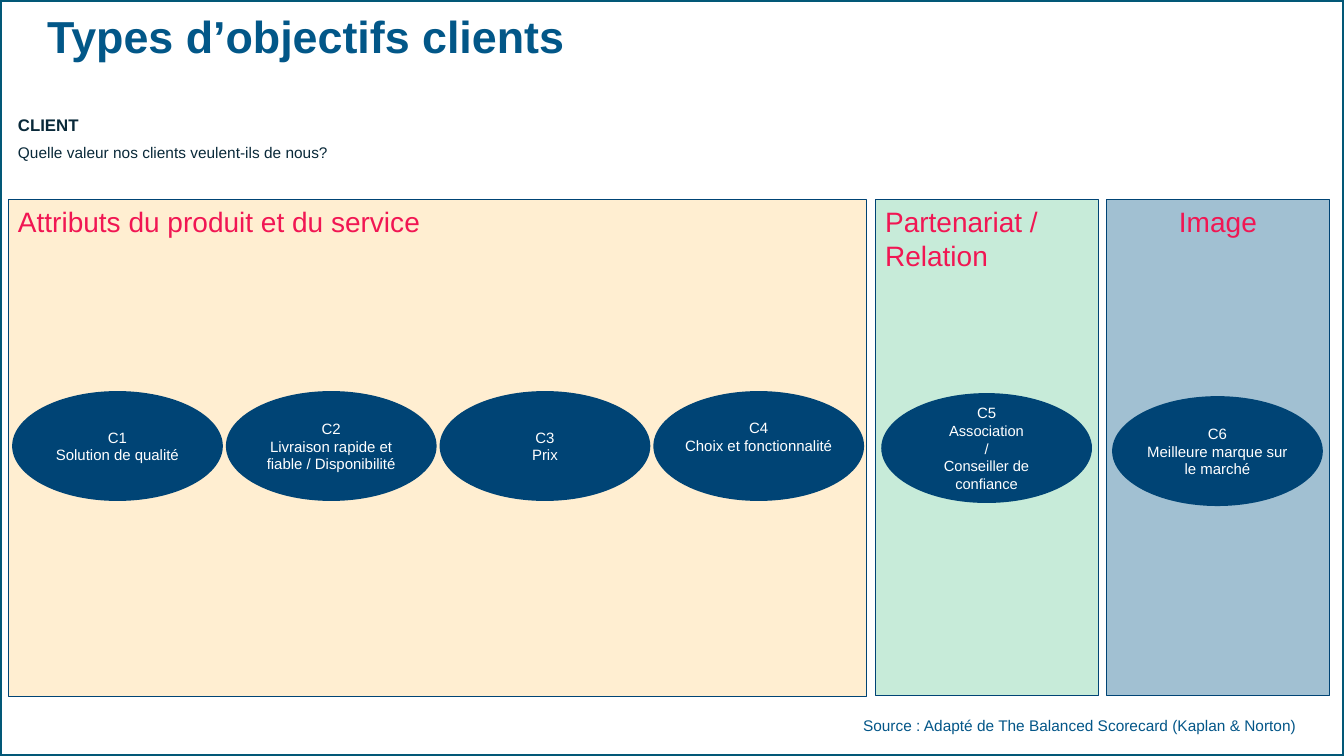
"""Build the slide on types of customer objectives."""
from dataclasses import dataclass

from lxml import etree
from pptx import Presentation, util as u
from pptx.dml.color import RGBColor
from pptx.enum import shapes, text
from pptx.oxml import ns

COLORS = {
    "frame": "025877", "title": "025788", "navy": "004475", "heading": "F11653",
    "peach": "FFAA1B", "mint": "C7EBD9", "blue": "005687", "white": "FFFFFF",
    "ink": "092939", "source": "035688",
}
LEFT, CENTER = text.PP_ALIGN.LEFT, text.PP_ALIGN.CENTER
MIDDLE, TOP = text.MSO_ANCHOR.MIDDLE, text.MSO_ANCHOR.TOP
PANEL_TOP = 1.98
OVAL_WIDTH, OVAL_HEIGHT = 2.09, 1.09


@dataclass
class Panel:
    heading: str
    left: float
    width: float
    height: float
    color: str
    opacity: int = 100
    align: text.PP_ALIGN = LEFT


@dataclass
class Objective:
    lines: list[str]
    left: float
    top: float = 3.88
    bottom_inset: float = 0.05
    detail_size: float = 10.7


PANELS = [
    Panel("Partenariat / Relation", 8.68, 2.22, 4.92, "mint"),
    Panel("Attributs du produit et du service", 0.08, 8.51, 4.93, "peach", 20),
    Panel("Image", 10.97, 2.22, 4.92, "blue", 37, CENTER),
]
PRODUCT_LEFT, PRODUCT_STEP = 0.12, 2.12
PRODUCT_OBJECTIVES = [
    Objective(lines, PRODUCT_LEFT + index * PRODUCT_STEP, bottom_inset=inset)
    for index, (lines, inset) in enumerate([
        (["C1", "Solution de qualité"], 0.05),
        (["C2", "Livraison rapide et fiable / Disponibilité"], 0.05),
        (["C3", "Prix"], 0.05),
        (["C4", "Choix et fonctionnalité"], 0.23),
    ])
]
OBJECTIVES = PRODUCT_OBJECTIVES + [
    Objective(["C5", "Association", "/", "Conseiller de confiance"], 8.74, 3.9,
              detail_size=10.5),
    Objective(["C6", "Meilleure marque sur le marché"], 11.03, 3.93),
]


def rgb(name: str) -> RGBColor:
    return RGBColor.from_string(COLORS[name])


def add_shape(slide, kind, left: float, top: float, width: float, height: float,
              fill: str | None, line: str | None = None, weight: float = 0.75):
    shape = slide.shapes.add_shape(
        kind, u.Inches(left), u.Inches(top), u.Inches(width), u.Inches(height))
    shape.shadow.inherit = False
    if fill:
        shape.fill.solid()
        shape.fill.fore_color.rgb = rgb(fill)
    else:
        shape.fill.background()
    if line:
        shape.line.color.rgb = rgb(line)
        shape.line.width = u.Pt(weight)
    else:
        shape.line.fill.background()
    return shape


def add_text_box(slide, left: float, top: float, width: float, height: float):
    return slide.shapes.add_textbox(
        u.Inches(left), u.Inches(top), u.Inches(width), u.Inches(height))


def set_frame(shape, anchor: text.MSO_ANCHOR, left: float = 0.1, top: float = 0.05,
              right: float = 0.1, bottom: float = 0.05) -> None:
    frame = shape.text_frame
    frame.word_wrap = True
    frame.vertical_anchor = anchor
    frame.margin_left, frame.margin_right = u.Inches(left), u.Inches(right)
    frame.margin_top, frame.margin_bottom = u.Inches(top), u.Inches(bottom)


def write(shape, lines: list[str], sizes: list[float], color: str,
          align: text.PP_ALIGN = LEFT) -> list:
    shape.text_frame.text = "\n".join(lines)
    paragraphs = list(shape.text_frame.paragraphs)
    for paragraph, size in zip(paragraphs, sizes):
        paragraph.alignment = align
        paragraph.font.name = "Arial"
        paragraph.font.size = u.Pt(size)
        paragraph.font.color.rgb = rgb(color)
    return paragraphs


def set_opacity(shape, percent: int) -> None:
    color = shape.fill._xPr.find(".//" + ns.qn("a:srgbClr"))
    etree.SubElement(color, ns.qn("a:alpha"), val=str(percent * 1000))


def draw_panel(slide, panel: Panel) -> None:
    shape = add_shape(slide, shapes.MSO_SHAPE.RECTANGLE, panel.left, PANEL_TOP,
                      panel.width, panel.height, panel.color, "navy")
    if panel.opacity < 100:
        set_opacity(shape, panel.opacity)
    set_frame(shape, TOP)
    write(shape, [panel.heading], [20], "heading", panel.align)


def draw_objective(slide, objective: Objective) -> None:
    shape = add_shape(slide, shapes.MSO_SHAPE.OVAL, objective.left, objective.top,
                      OVAL_WIDTH, OVAL_HEIGHT, "navy")
    set_frame(shape, MIDDLE, left=0, right=0, bottom=objective.bottom_inset)
    sizes = [10.7] + [objective.detail_size] * (len(objective.lines) - 1)
    write(shape, objective.lines, sizes, "white", CENTER)


def main() -> None:
    presentation = Presentation()
    presentation.slide_width = u.Inches(13.33)
    presentation.slide_height = u.Inches(7.5)
    slide = presentation.slides.add_slide(presentation.slide_layouts[6])
    add_shape(slide, shapes.MSO_SHAPE.RECTANGLE, 0, 0, 13.33, 7.5, None, "frame", 3)

    for panel in PANELS:
        draw_panel(slide, panel)
    for objective in OBJECTIVES:
        draw_objective(slide, objective)

    title = add_text_box(slide, 0.37, 0.28, 9.87, 0.64)
    set_frame(title, MIDDLE, bottom=0.47)
    heading = write(title, ["Types d’objectifs clients"], [32], "title")[0]
    heading.font.bold = True
    heading.line_spacing = 0.9

    question = add_text_box(slide, 0.08, 1.08, 5.94, 0.86)
    set_frame(question, TOP, top=0.06)
    client, value = write(
        question, ["CLIENT", "Quelle valeur nos clients veulent-ils de nous?"],
        [12, 11], "ink")
    client.font.bold = True
    value.space_before = u.Pt(6)

    source = add_text_box(slide, 8.56, 7.09, 4.62, 0.4)
    set_frame(source, TOP, left=0, top=0.01, right=0, bottom=0)
    write(source, ["Source : Adapté de The Balanced Scorecard (Kaplan & Norton)"],
          [11], "source")

    presentation.save("out.pptx")


if __name__ == "__main__":
    main()
